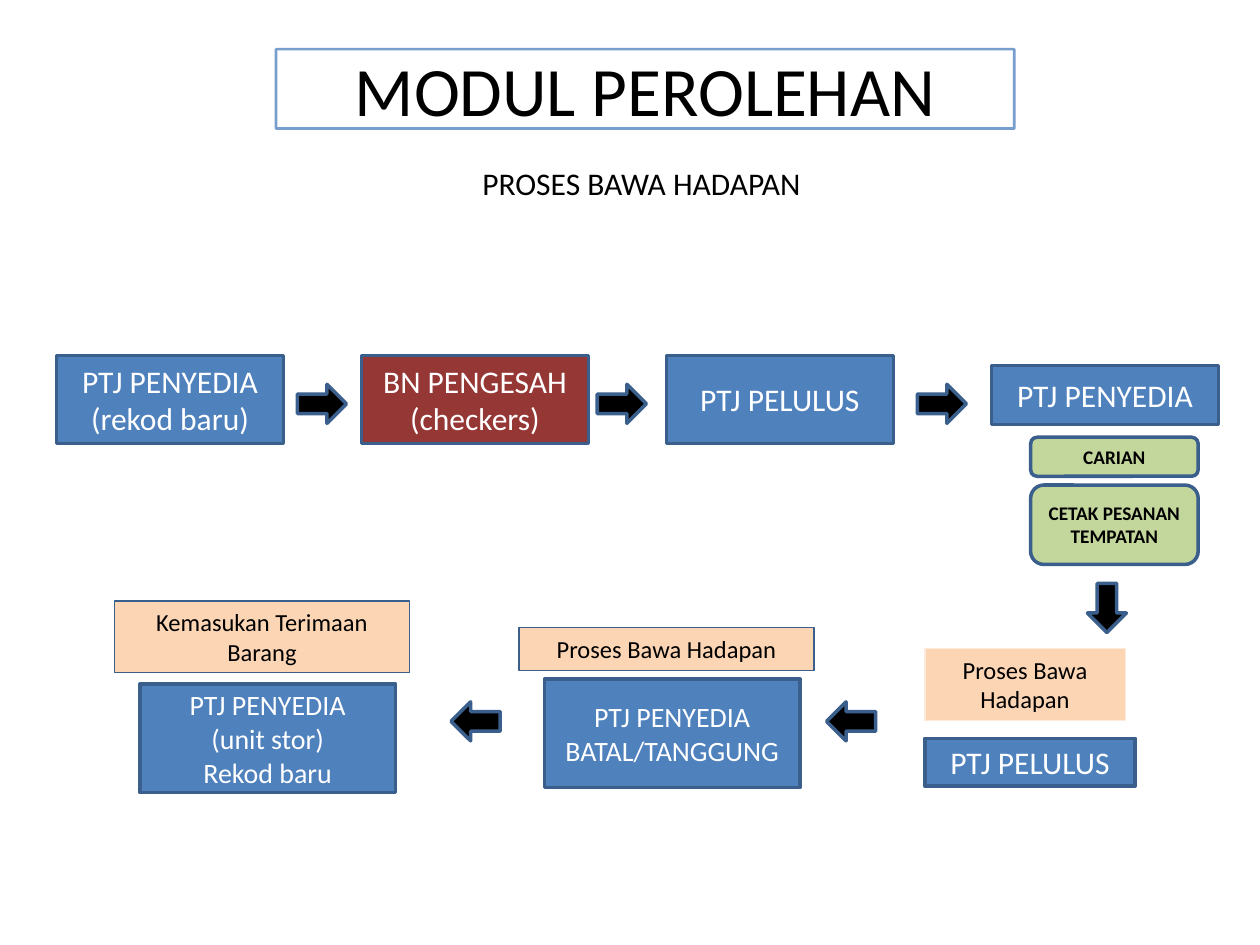
import lxml.etree
import pptx
import pptx.dml.color
import pptx.enum.shapes
import pptx.enum.text
import pptx.oxml.ns
import pptx.util

Inches = pptx.util.Inches
Pt = pptx.util.Pt
RGBColor = pptx.dml.color.RGBColor
Shape = pptx.enum.shapes.MSO_SHAPE
Anchor = pptx.enum.text.MSO_ANCHOR

BLACK = RGBColor(0x00, 0x00, 0x00)
WHITE = RGBColor(0xFF, 0xFF, 0xFF)
BLUE = RGBColor(0x4F, 0x81, 0xBD)
DARK_BLUE = RGBColor(0x3A, 0x5F, 0x8C)
RED = RGBColor(0x95, 0x37, 0x35)
GREEN = RGBColor(0xC3, 0xD6, 0x9B)
PEACH = RGBColor(0xFC, 0xD5, 0xB5)
PALE_PEACH = RGBColor(0xFD, 0xEA, 0xDA)


class FlowSlide:
    font = "Calibri"

    def __init__(self, deck):
        self.page = deck.slides.add_slide(deck.slide_layouts[5])

    def set_text(self, box, text, size, color, bold=False, anchor=Anchor.MIDDLE):
        frame = box.text_frame
        frame.text = text
        frame.word_wrap = True
        frame.auto_size = pptx.enum.text.MSO_AUTO_SIZE.NONE
        frame.vertical_anchor = anchor
        for para in frame.paragraphs:
            para.alignment = pptx.enum.text.PP_ALIGN.CENTER
            for span in para.runs:
                span.font.name = self.font
                span.font.size = Pt(size)
                span.font.bold = bold
                span.font.color.rgb = color

    def title(self, text, left, top, width, height):
        box = self.page.shapes.title
        box.left, box.top = Inches(left), Inches(top)
        box.width, box.height = Inches(width), Inches(height)
        box.line.color.rgb = BLUE
        box.line.width = Pt(1.5)
        line_color = box.element.spPr.find(".//" + pptx.oxml.ns.qn("a:srgbClr"))
        lxml.etree.SubElement(line_color, pptx.oxml.ns.qn("a:alpha"), val="76000")
        self.set_text(box, text, 39.6, BLACK)

    def subtitle(self, text, left, top, width, height):
        box = self.page.shapes.add_textbox(
            Inches(left), Inches(top), Inches(width), Inches(height))
        self.set_text(box, text, 18, BLACK, anchor=Anchor.TOP)

    def shape(self, kind, left, top, width, height, fill, line=DARK_BLUE, weight=2):
        shape = self.page.shapes.add_shape(
            kind, Inches(left), Inches(top), Inches(width), Inches(height))
        shape.shadow.inherit = False
        shape.fill.solid()
        shape.fill.fore_color.rgb = fill
        shape.line.color.rgb = line
        shape.line.width = Pt(weight)
        return shape

    def step(self, text, left, top, width, height, size=18, fill=BLUE):
        box = self.shape(Shape.RECTANGLE, left, top, width, height, fill)
        self.set_text(box, text, size, WHITE)

    def action(self, text, top, height):
        box = self.shape(Shape.ROUNDED_RECTANGLE, 8.18, top, 1.33, height, GREEN)
        self.set_text(box, text, 11, BLACK, bold=True)

    def label(self, text, left, top, width, height, line=DARK_BLUE):
        box = self.shape(Shape.RECTANGLE, left, top, width, height, PEACH, line, 0.75)
        self.set_text(box, text, 14, BLACK, anchor=Anchor.TOP)

    def arrow(self, left, top, rotation=0):
        arrow = self.shape(Shape.RIGHT_ARROW, left, top, 0.39, 0.31, BLACK)
        arrow.rotation = rotation


def main():
    deck = pptx.Presentation()
    deck.slide_width, deck.slide_height = Inches(10), Inches(7.5)
    flow = FlowSlide(deck)
    flow.title("MODUL PEROLEHAN", 2.19, 0.39, 5.86, 0.63)
    flow.subtitle("PROSES BAWA HADAPAN ", 2.19, 1.25, 5.86, 0.4)

    # Upper row, left to right
    upper_steps = [("PTJ PENYEDIA\n(rekod baru)", BLUE),
                   ("BN PENGESAH\n(checkers)", RED),
                   ("PTJ PELULUS", BLUE)]
    for index, (text, fill) in enumerate(upper_steps):
        flow.step(text, 0.45 + 2.42 * index, 2.82, 1.8, 0.7, fill=fill)
    for left in (2.36, 4.74, 7.28):
        flow.arrow(left, 3.05)
    flow.step("PTJ PENYEDIA", 7.87, 2.9, 1.8, 0.47)

    # Actions leading down to the lower row
    flow.action("CARIAN", 3.47, 0.31)
    flow.action("CETAK PESANAN TEMPATAN", 3.85, 0.63)
    flow.arrow(8.59, 4.67, 90)

    # Lower row, right to left
    flow.label("Proses Bawa\nHadapan", 7.34, 5.15, 1.59, 0.57, PALE_PEACH)
    flow.step("PTJ PELULUS", 7.34, 5.86, 1.67, 0.38)
    flow.label("Proses Bawa Hadapan", 4.12, 4.98, 2.34, 0.34)
    flow.step("PTJ PENYEDIA\nBATAL/TANGGUNG", 4.32, 5.39, 2.03, 0.86, 16)
    flow.label("Kemasukan Terimaan Barang", 0.91, 4.77, 2.34, 0.57)
    flow.step("PTJ PENYEDIA\n(unit stor)\nRekod baru", 1.11, 5.43, 2.03, 0.86, 16)
    for left in (6.56, 3.58):
        flow.arrow(left, 5.57, 180)

    deck.save("out.pptx")


if __name__ == "__main__":
    main()
